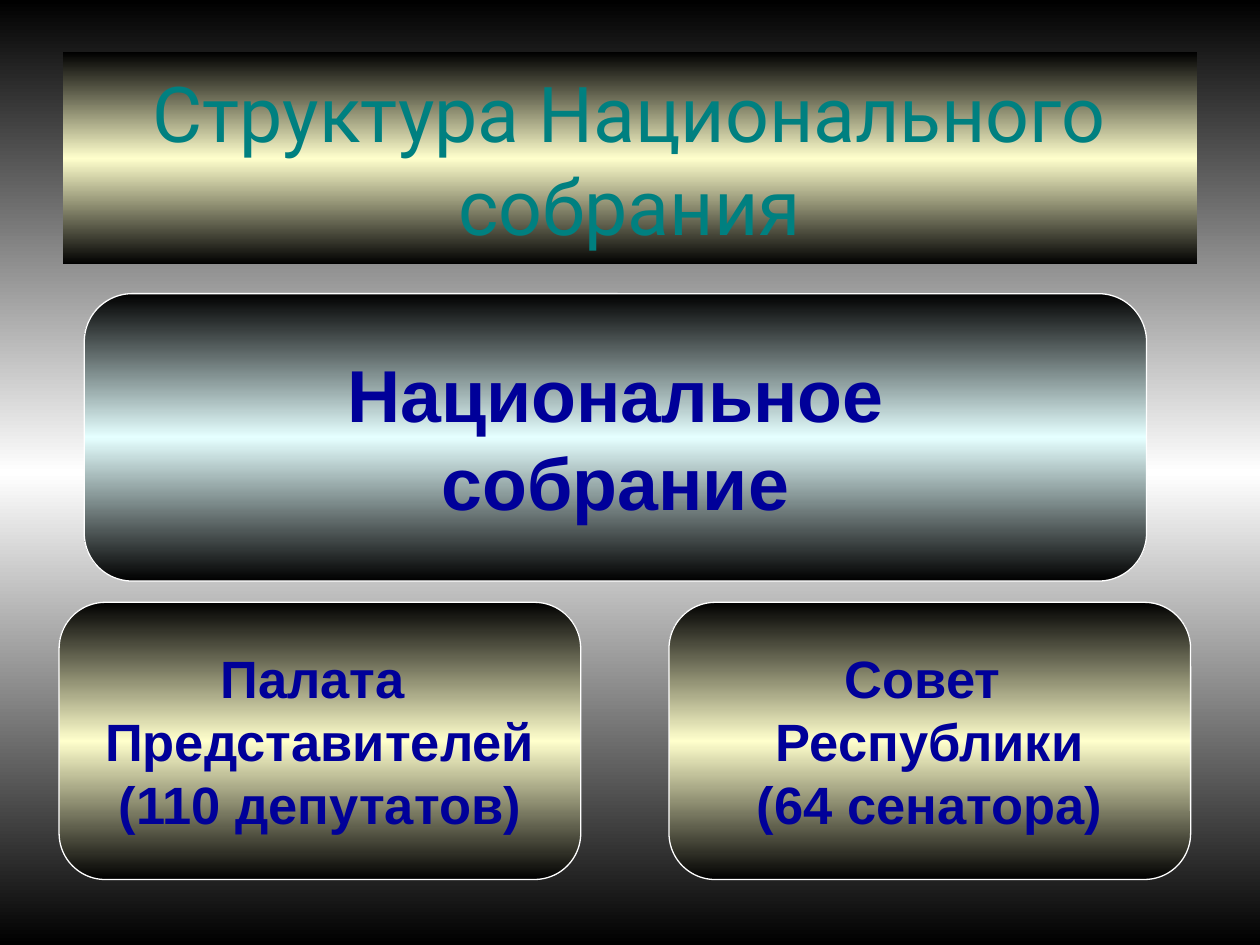
"""Build a slide on the structure of the National Assembly."""
from copy import deepcopy
from dataclasses import dataclass

from pptx import Presentation
from pptx.dml.color import RGBColor
from pptx.dml.fill import FillFormat
from pptx.enum.shapes import MSO_SHAPE
from pptx.enum.text import MSO_ANCHOR, MSO_AUTO_SIZE, PP_ALIGN
from pptx.oxml.ns import qn
from pptx.oxml.xmlchemy import BaseOxmlElement
from pptx.slide import Slide
from pptx.text.text import TextFrame
from pptx.util import Pt

COLORS = {
    "edge": "000000",
    "white": "FFFFFF",
    "cream": "FFFFCC",
    "ice": "E5FFFF",
    "teal": "008080",
    "navy": "000099",
}
CHAMBER_TOP, CHAMBER_WIDTH, CHAMBER_HEIGHT = 344.2, 298.1, 158.4


@dataclass
class Body:
    """A rounded box naming one body of the assembly, in points."""

    text: str
    left: float
    top: float
    width: float
    height: float
    size: float
    glow: str


BODIES = [
    Body("Национальное\nсобрание", 48.2, 167.8, 607, 164.2, 42, "ice"),
    *(
        Body(text, left, CHAMBER_TOP, CHAMBER_WIDTH, CHAMBER_HEIGHT, 30, "cream")
        for text, left in (
            ("Палата \nПредставителей\n(110 депутатов)", 33.8),
            ("Совет \nРеспублики\n(64 сенатора)", 382.3),
        )
    ),
]


def color(name: str) -> RGBColor:
    """Look up a named colour."""
    return RGBColor.from_string(COLORS[name])


def glow_fill(fill: FillFormat, owner: BaseOxmlElement, glow: str) -> None:
    """Fill with a vertical gradient that is dark at both ends."""
    fill.gradient()
    fill.gradient_angle = 270
    stop_list = next(owner.iter(qn("a:gsLst")))
    stop_list.append(deepcopy(stop_list[-1]))
    for stop, position, name in zip(
        fill.gradient_stops, (0, 0.5, 1), ("edge", glow, "edge")
    ):
        stop.position = position
        stop.color.rgb = color(name)


def write(
    frame: TextFrame, text: str, font: str, size: float, ink: str, bold: bool
) -> None:
    """Write centred text in one style."""
    frame.text = text
    frame.auto_size = MSO_AUTO_SIZE.NONE
    frame.vertical_anchor = MSO_ANCHOR.MIDDLE
    for paragraph in frame.paragraphs:
        paragraph.alignment = PP_ALIGN.CENTER
        for run in paragraph.runs:
            run.font.name = font
            run.font.size = Pt(size)
            run.font.bold = bold
            run.font.color.rgb = color(ink)


def add_body(slide: Slide, body: Body) -> None:
    """Draw one rounded box with its text."""
    box = slide.shapes.add_shape(
        MSO_SHAPE.ROUNDED_RECTANGLE,
        Pt(body.left), Pt(body.top), Pt(body.width), Pt(body.height),
    )
    box.shadow.inherit = False
    glow_fill(box.fill, box.element, body.glow)
    box.line.color.rgb = color("white")
    box.line.width = Pt(0.75)
    frame = box.text_frame
    frame.margin_left = frame.margin_right = Pt(0)
    frame.margin_top = frame.margin_bottom = Pt(0)
    write(frame, body.text, "Arial", body.size, "navy", True)
    frame.word_wrap = False


def add_title(slide: Slide, text: str) -> None:
    """Place and format the title."""
    title = slide.shapes.title
    title.left, title.top = Pt(36), Pt(30)
    title.width, title.height = Pt(648), Pt(121)
    glow_fill(title.fill, title.element, "cream")
    write(title.text_frame, text, "Roboto", 44, "teal", False)


def main() -> None:
    """Build and save the presentation."""
    presentation = Presentation()
    presentation.slide_width, presentation.slide_height = Pt(720), Pt(540)
    slide = presentation.slides.add_slide(presentation.slide_layouts[5])
    glow_fill(slide.background.fill, slide.element, "white")
    add_title(slide, "Структура Национального собрания")
    for body in BODIES:
        add_body(slide, body)
    presentation.save("out.pptx")


if __name__ == "__main__":
    main()
